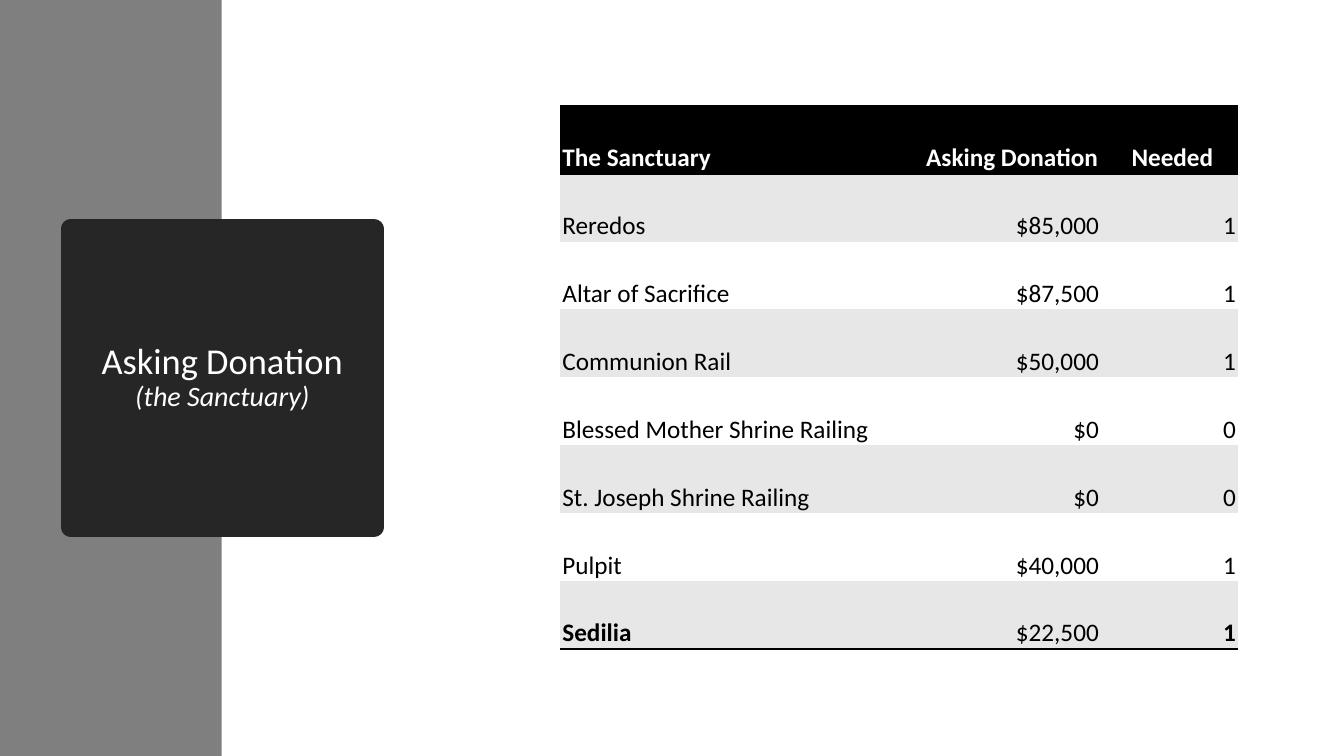
"""Builds the slide listing the donations asked for the sanctuary."""
from dataclasses import dataclass
from typing import Any

from lxml import etree
from pptx import Presentation
from pptx.dml.color import RGBColor
from pptx.enum.shapes import MSO_SHAPE
from pptx.enum.text import MSO_ANCHOR, PP_ALIGN
from pptx.oxml.ns import qn
from pptx.util import Inches, Pt

RECT = MSO_SHAPE.RECTANGLE
MIDDLE, BOTTOM = MSO_ANCHOR.MIDDLE, MSO_ANCHOR.BOTTOM
LEFT, CENTER, RIGHT = PP_ALIGN.LEFT, PP_ALIGN.CENTER, PP_ALIGN.RIGHT
WIDTH, HEIGHT = Inches(13.33), Inches(7.5)
COLORS = {"black": "000000", "white": "FFFFFF", "side": "7F7F7F",
          "card": "262626", "band": "E7E7E7"}
NO_STYLE = "{2D5ABB26-0587-4C30-8999-92F81FD0307C}"
TABLE_X, TABLE_Y, ROW_H = 41.7, 14, 8.98
CARD_LINE, RULE = 13.75, 2


@dataclass
class Panel:
    """A filled rectangle placed in percent of the slide."""
    x: float
    y: float
    w: float
    h: float
    color: str


@dataclass
class Column:
    """A table column with its width in percent and its right inset in inches."""
    title: str
    width: float
    align: Any
    head_align: Any
    inset: float


@dataclass
class Item:
    """A table row and its bold state for name and count."""
    name: str
    price: str
    needed: str
    bold: bool = False


BACKDROP = Panel(0, 0, 100, 100, "white")
SIDEBAR = Panel(0, 0, 16.5, 100, "side")
CARD = Panel(5.25, 30.27, 22.58, 39.47, "card")
COLUMNS = [
    Column("The Sanctuary", 27.01, LEFT, LEFT, 0.02),
    Column("Asking Donation", 13.65, RIGHT, CENTER, 0.08),
    Column("Needed", 9.75, RIGHT, CENTER, 0.02),
]
ITEMS = [
    Item("Reredos", "$85,000", "1"),
    Item("Altar of Sacrifice", "$87,500", "1"),
    Item("Communion Rail", "$50,000", "1"),
    Item("Blessed Mother Shrine Railing", "$0", "0"),
    Item("St. Joseph Shrine Railing", "$0", "0"),
    Item("Pulpit", "$40,000", "1"),
    Item("Sedilia", "$22,500", "1", bold=True),
]


def across(share: float) -> int:
    """Turn a percentage of the slide width into a length."""
    return round(WIDTH * share / 100)


def down(share: float) -> int:
    """Turn a percentage of the slide height into a length."""
    return round(HEIGHT * share / 100)


def rgb(name: str) -> RGBColor:
    """Look up a named colour."""
    return RGBColor.from_string(COLORS[name])


def add_run(p: Any, text: str, color: str, **formats: Any) -> None:
    """Add a formatted run to a paragraph."""
    r = p.add_run()
    r.text = text
    r.font.color.rgb = rgb(color)
    for key, value in {"name": "Calibri", **formats}.items():
        setattr(r.font, key, value)


def add_panel(s: Any, panel: Panel) -> Any:
    """Draw a panel without outline or shadow."""
    sp = s.shapes.add_shape(RECT, across(panel.x), down(panel.y),
                            across(panel.w), down(panel.h))
    sp.shadow.inherit = False
    sp.fill.solid()
    sp.fill.fore_color.rgb = rgb(panel.color)
    sp.line.fill.background()
    return sp


def add_title(s: Any) -> None:
    """Draw the dark card with its round-joined outline and the title."""
    sp = add_panel(s, CARD)
    sp.line.color.rgb = rgb(CARD.color)
    sp.line.width = Pt(CARD_LINE)
    etree.SubElement(sp.line._get_or_add_ln(), qn("a:round"))
    tf = sp.text_frame
    tf.word_wrap, tf.vertical_anchor = True, MIDDLE
    p = tf.paragraphs[0]
    p.alignment, p.line_spacing = CENTER, 0.9
    add_run(p, "Asking Donation", "white", size=Pt(26))
    p.add_line_break()
    add_run(p, "(the Sanctuary)", "white", size=Pt(20), italic=True)


def add_rules(cell: Any, sides: list[str]) -> None:
    """Put black borders on the given sides of a cell."""
    props = cell._tc.get_or_add_tcPr()
    for i, side in enumerate(sides):
        ln = etree.Element(qn(f"a:{side}"), w=str(Pt(RULE)))
        fill = etree.SubElement(ln, qn("a:solidFill"))
        etree.SubElement(fill, qn("a:srgbClr"), val=COLORS["black"])
        props.insert(i, ln)


def fill_cell(cell: Any, text: str, column: Column, align: Any,
              fill: str, color: str, bold: bool) -> None:
    """Write and format one table cell."""
    formats = {"margin_left": Inches(0.02), "margin_right": Inches(column.inset),
               "margin_top": Inches(0.02), "margin_bottom": 0,
               "vertical_anchor": BOTTOM}
    for key, value in formats.items():
        setattr(cell, key, value)
    cell.fill.solid()
    cell.fill.fore_color.rgb = rgb(fill)
    p = cell.text_frame.paragraphs[0]
    p.alignment = align
    add_run(p, text, color, size=Pt(18), bold=bold)


def add_donations(s: Any) -> None:
    """Draw the donation table."""
    count = len(ITEMS) + 1
    table = s.shapes.add_table(
        count, len(COLUMNS), across(TABLE_X), down(TABLE_Y),
        across(sum(c.width for c in COLUMNS)), down(ROW_H * count)).table
    table._tbl.tblPr.find(qn("a:tableStyleId")).text = NO_STYLE
    for row in table.rows:
        row.height = down(ROW_H)
    for j, column in enumerate(COLUMNS):
        table.columns[j].width = across(column.width)
        head = table.cell(0, j)
        fill_cell(head, column.title, column, column.head_align,
                  "black", "white", True)
        add_rules(head, ["lnT", "lnB"])
        for i, item in enumerate(ITEMS, 1):
            text = (item.name, item.price, item.needed)[j]
            fill_cell(table.cell(i, j), text, column, column.align,
                      "band" if i % 2 else "white", "black",
                      item.bold and j != 1)
        add_rules(table.cell(count - 1, j), ["lnB"])


def main() -> None:
    """Build and save the slide."""
    prs = Presentation()
    prs.slide_width, prs.slide_height = WIDTH, HEIGHT
    s = prs.slides.add_slide(prs.slide_layouts[6])
    s.background.fill.solid()
    s.background.fill.fore_color.rgb = rgb("black")
    for panel in (BACKDROP, SIDEBAR):
        add_panel(s, panel)
    add_title(s)
    add_donations(s)
    prs.save("out.pptx")


if __name__ == "__main__":
    main()
